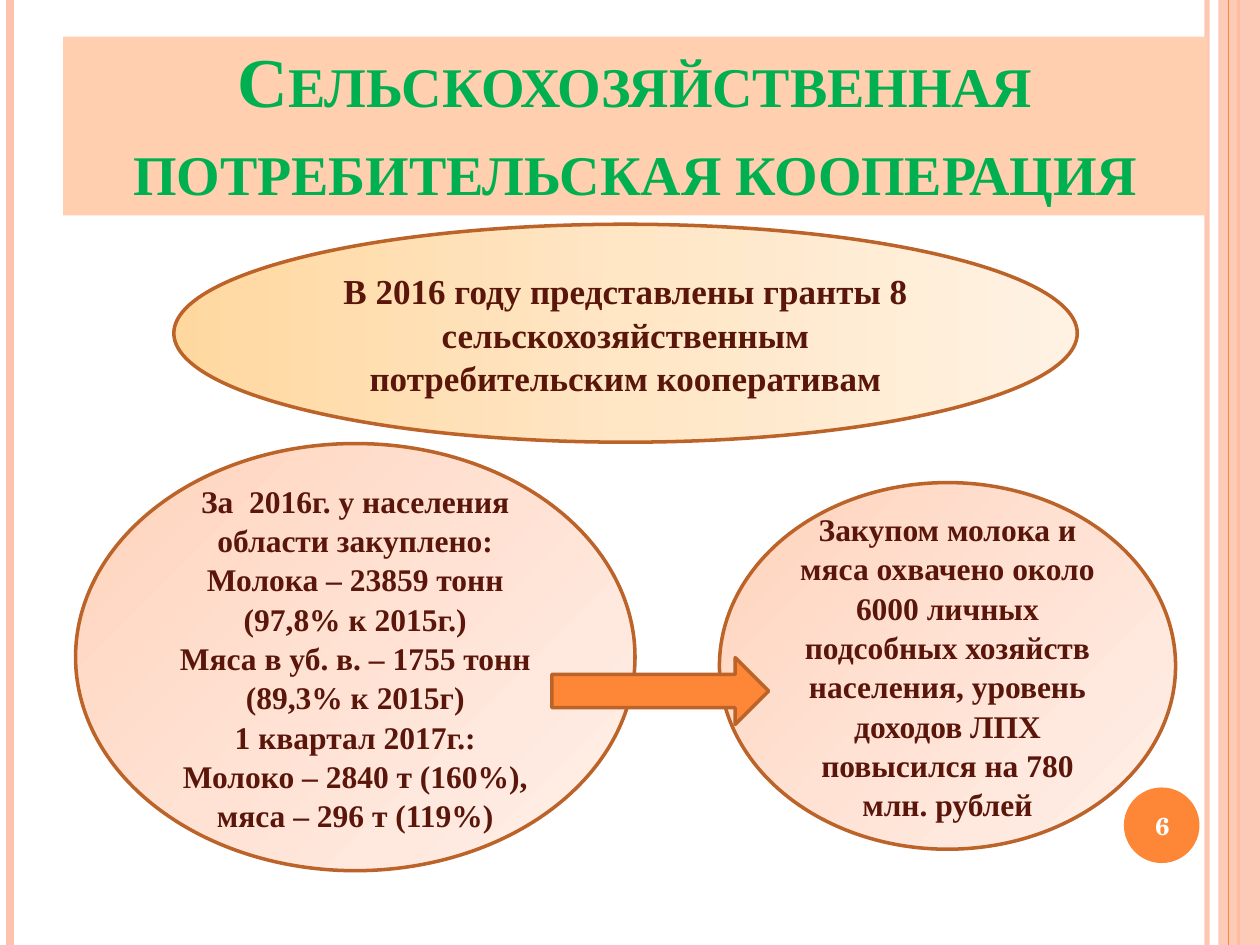
from copy import deepcopy

from lxml import etree
from pptx import Presentation
from pptx import util as u
from pptx.dml.color import RGBColor
from pptx.enum import shapes, text
from pptx.oxml.ns import qn

ORANGE, PEACH, BROWN, RUST = "FE8637", "FEC3AE", "5A160B", "BC6329"
AMBER_STOPS = ["FFD8A0", "FFE6C5", "FFF2E3"]
PEACH_STOPS = ["FFD3BB", "FFE2D4", "FFF0EA"]
SERIF = "Times New Roman"


def rgb(hex_color):
    return RGBColor.from_string(hex_color)


def set_alpha(fill_parent, percent):
    color = fill_parent.find(".//" + qn("a:srgbClr"))
    etree.SubElement(color, qn("a:alpha")).set("val", str(percent * 1000))


def write(frame, *paragraphs, size=18, color=BROWN, font=SERIF, spacing=1.04,
          anchor=text.MSO_ANCHOR.MIDDLE, small_caps=False):
    frame.word_wrap = True
    frame.auto_size = text.MSO_AUTO_SIZE.NONE
    frame.vertical_anchor = anchor
    for index, words in enumerate(paragraphs):
        paragraph = frame.add_paragraph() if index else frame.paragraphs[0]
        paragraph.alignment = text.PP_ALIGN.CENTER
        paragraph.line_spacing = spacing
        run = paragraph.add_run()
        run.text = words
        run.font.name, run.font.size, run.font.bold = font, u.Pt(size), True
        run.font.color.rgb = rgb(color)
        if small_caps:
            run.font._element.set("cap", "small")


class Board:
    """Draws on one slide; lengths are cells of a 100 by 75 grid."""

    def __init__(self, deck):
        self.cell = deck.slide_width / 100
        self.rows = 75
        self.slide = deck.slides.add_slide(deck.slide_layouts[5])

    def cells(self, *lengths):
        return [u.Emu(round(length * self.cell)) for length in lengths]

    def title(self, box, words, fill, **style):
        heading = self.slide.shapes.title
        heading.left, heading.top, heading.width, heading.height = self.cells(*box)
        heading.fill.solid()
        heading.fill.fore_color.rgb = rgb(fill)
        write(heading.text_frame, words, **style)
        self.slide.shapes._spTree.append(heading._element)  # above the stripes

    def stripe(self, column, color, width, alpha=None):
        line = self.slide.shapes.add_connector(
            shapes.MSO_CONNECTOR.STRAIGHT, *self.cells(column, 0, column, self.rows))
        line.line.color.rgb = rgb(color)
        line.line.width = u.Pt(width)
        etree.SubElement(line._element.spPr, qn("a:effectLst"))
        if alpha:
            set_alpha(line._element.spPr, alpha)

    def shape(self, kind, box, fill=None, line=None, alpha=None):
        shape = self.slide.shapes.add_shape(kind, *self.cells(*box))
        shape.shadow.inherit = False
        if fill:
            shape.fill.solid()
            shape.fill.fore_color.rgb = rgb(fill)
        if alpha:
            set_alpha(shape._element.spPr, alpha)
        if line:
            shape.line.color.rgb = rgb(line)
            shape.line.width = u.Pt(2)
        else:
            shape.line.fill.background()
        return shape

    def oval(self, box, stops, angle, *paragraphs, size=18):
        """Ellipse with text and an even gradient; angle runs clockwise."""
        oval = self.shape(shapes.MSO_SHAPE.OVAL, box, line=RUST)
        oval.fill.gradient()
        oval.fill.gradient_angle = -angle % 360
        stop_list = oval._element.spPr.find(".//" + qn("a:gsLst"))
        stop_list.append(deepcopy(stop_list[-1]))
        for index, (stop, color) in enumerate(zip(oval.fill.gradient_stops, stops)):
            stop.position = index / (len(stops) - 1)
            stop.color.rgb = rgb(color)
        write(oval.text_frame, *paragraphs, size=size)

    def label(self, box, words, **style):
        frame = self.slide.shapes.add_textbox(*self.cells(*box)).text_frame
        write(frame, words, **style)


def main():
    deck = Presentation()
    deck.slide_width, deck.slide_height = u.Inches(10), u.Inches(7.5)
    board = Board(deck)

    board.stripe(95.8, PEACH, 3, alpha=93)
    board.stripe(0.8, PEACH, 4.5)
    board.stripe(98.3, ORANGE, 1.5)
    board.shape(shapes.MSO_SHAPE.RECTANGLE, (96.7, 0, 3.3, 75), PEACH, alpha=87)
    board.stripe(97.5, ORANGE, 0.75)
    board.shape(shapes.MSO_SHAPE.OVAL, (89.2, 62.5, 6, 6), ORANGE)

    board.title((5, 2.9, 90.8, 14.2), "Сельскохозяйственная потребительская кооперация",
                "FFCFAF", size=40, color="00B050", small_caps=True,
                anchor=text.MSO_ANCHOR.BOTTOM)
    board.label((88.9, 62.7, 6.7, 5.7), "6", size=14, color="FFFFFF",
                font="TeX Gyre Schola", spacing=1)

    board.oval((13.8, 17.8, 71.7, 17.3), AMBER_STOPS, 0,
               "В 2016 году представлены гранты 8 сельскохозяйственным "
               "потребительским кооперативам", size=20)
    board.oval((6, 35.2, 44.4, 33.9), PEACH_STOPS, 45,
               "За  2016г. у населения области закуплено:",
               "Молока – 23859 тонн (97,8% к 2015г.)",
               "Мяса в уб. в. – 1755 тонн (89,3% к 2015г)",
               "1 квартал 2017г.:",
               "Молоко – 2840 т (160%), мяса – 296 т (119%)")
    board.oval((57.1, 38.3, 36.2, 29.1), PEACH_STOPS, 45,
               "Закупом молока и мяса охвачено около 6000 личных подсобных "
               "хозяйств населения, уровень доходов ЛПХ повысился на 780 млн. рублей")
    board.shape(shapes.MSO_SHAPE.RIGHT_ARROW, (43.8, 52.2, 17.2, 5.3), ORANGE, RUST)

    deck.save("out.pptx")


if __name__ == "__main__":
    main()
